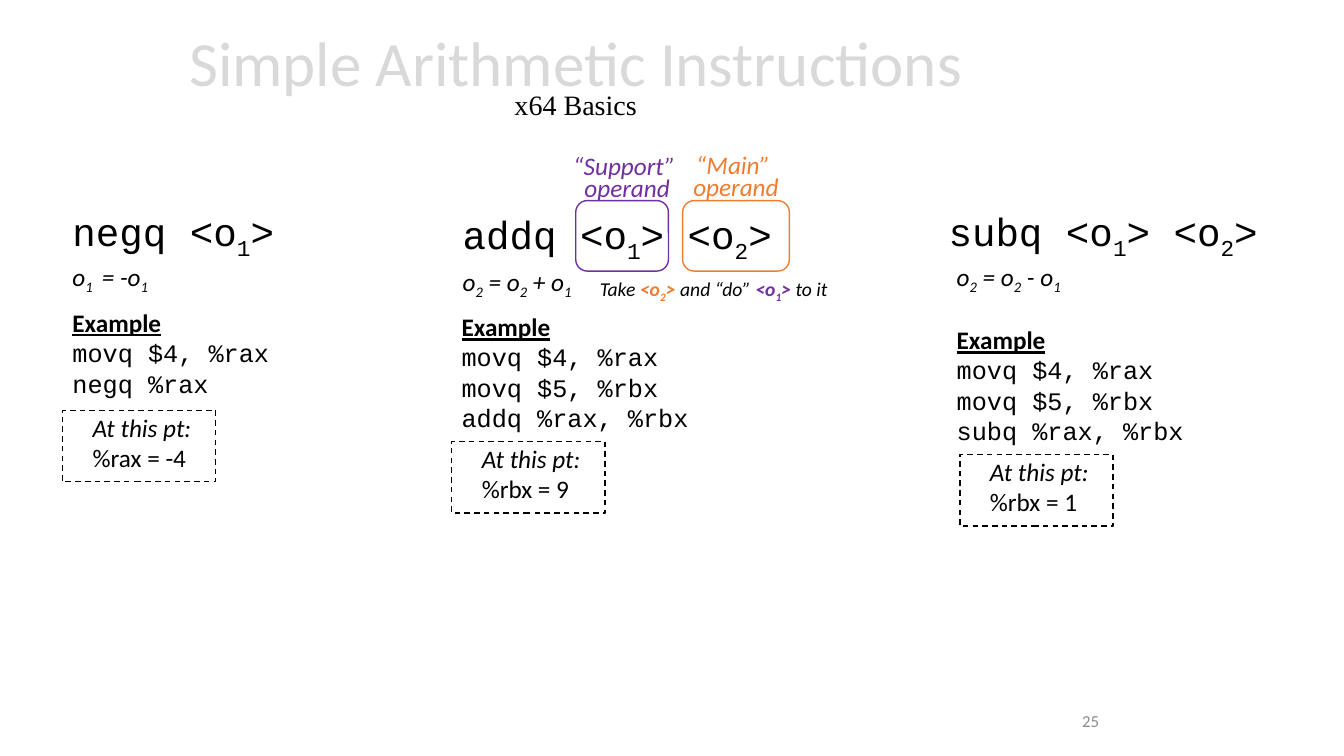
from pptx import Presentation
from pptx.dml.color import RGBColor
from pptx.enum.dml import MSO_LINE
from pptx.enum.shapes import MSO_SHAPE
from pptx.enum.text import MSO_ANCHOR, PP_ALIGN
from pptx.util import Inches, Pt

THEME = dict(
    sans="Calibri", mono="Courier New", serif="Times New Roman",
    black="000000", white="FFFFFF", title="D9D9D9", number="8C8C8C",
    main="ED7D31", support="7030A0",
    title_pt=45, subtitle_pt=20, syntax_pt=28, body_pt=18, note_pt=14, number_pt=12,
)

# Text in braces is subscript. Each part has its own (left, top, width, height).
TITLE, SUBTITLE = "Simple Arithmetic Instructions", "x64 Basics"
INSTRUCTIONS = [
    dict(syntax="negq <o{1}>", syntax_at=(0.62, 2.01, 2.32, 0.57),
         meaning="o{1 } = -o{1}", meaning_at=(0.62, 2.54, 0.99, 0.4),
         code=["movq $4, %rax", "negq %rax"], code_at=(0.62, 3, 2.16, 1.01),
         result="%rax = -4", result_at=(0.62, 4.07)),
    dict(syntax="addq <o{1}> <o{2}>", syntax_at=(4.49, 2.04, 3.41, 0.57),
         meaning="o{2} = o{2} + o{1}", meaning_at=(4.49, 2.59, 1.35, 0.4),
         code=["movq $4, %rax", "movq $5, %rbx", "addq %rax, %rbx"],
         code_at=(4.48, 3.04, 2.46, 1.31),
         result="%rbx = 9", result_at=(4.48, 4.38)),
    dict(syntax="subq <o{1}> <o{2}>", syntax_at=(9.31, 2.01, 3.34, 0.57),
         meaning="o{2} = o{2} - o{1}", meaning_at=(9.39, 2.54, 1.3, 0.4),
         code=["movq $4, %rax", "movq $5, %rbx", "subq %rax, %rbx"],
         code_at=(9.39, 3.17, 2.46, 1.31),
         result="%rbx = 1", result_at=(9.52, 4.51)),
]
OPERANDS = [  # label, colour, frame, label box
    ("“Main” ", "main", (6.77, 1.99, 1.06, 0.7), (6.77, 1.51, 1.06, 0.56)),
    ("“Support” ", "support", (5.71, 1.99, 0.92, 0.7), (5.58, 1.52, 1.28, 0.56)),
]
NOTE = [("Take ", "black"), ("<o{2}>", "main"), (" and “do” ", "black"),
        ("<o{1}>", "support"), (" to it", "black")]
RESULT_SIZE = (1.52, 0.71)


def rgb(color):
    return RGBColor.from_string(THEME[color])


def add_runs(p, text, size="body_pt", font="sans", color="black",
             bold=False, italic=False, underline=False):
    """Append text to a paragraph, lowering the parts in braces."""
    for i, piece in enumerate(text.replace("}", "{").split("{")):
        if not piece:
            continue
        r = p.add_run()
        r.text = piece
        f = r.font
        f.size, f.name = Pt(THEME[size]), THEME[font]
        f.bold, f.italic, f.underline = bold, italic, underline
        f.color.rgb = rgb(color)
        if i % 2:
            f._element.set("baseline", "-25000")


def add_text(s, at, lines=(), wrap=False, anchor=MSO_ANCHOR.TOP,
             align=PP_ALIGN.LEFT, spacing=None):
    """Add a text box of (text, style) lines and return its first paragraph."""
    tf = s.shapes.add_textbox(*map(Inches, at)).text_frame
    tf.word_wrap, tf.vertical_anchor = wrap, anchor
    for i in range(max(1, len(lines))):
        p = tf.add_paragraph() if i else tf.paragraphs[0]
        p.alignment, p.line_spacing = align, spacing
        if lines:
            text, style = lines[i]
            add_runs(p, text, **style)
    return tf.paragraphs[0]


def add_frame(s, shape, at, color, fill=None, dash=None):
    sp = s.shapes.add_shape(shape, *map(Inches, at))
    sp.shadow.inherit = False
    if fill:
        sp.fill.solid()
        sp.fill.fore_color.rgb = rgb(fill)
    else:
        sp.fill.background()
    sp.line.color.rgb, sp.line.width = rgb(color), Pt(1)
    if dash:
        sp.line.dash_style = dash


def add_instruction(s, item):
    add_text(s, item["syntax_at"], [(item["syntax"], dict(size="syntax_pt", font="mono"))])
    add_text(s, item["meaning_at"], [(item["meaning"], dict(italic=True))])
    add_text(s, item["code_at"], [("Example", dict(bold=True, underline=True))]
             + [(line, dict(font="mono")) for line in item["code"]])
    x, y = item["result_at"]
    add_frame(s, MSO_SHAPE.RECTANGLE, (x, y, *RESULT_SIZE), "black", "white", MSO_LINE.DASH)
    add_text(s, (x + 0.2, y - 0.03, 1.19, 0.71),
             [("At this pt:", dict(italic=True)), (item["result"], {})])


def main():
    prs = Presentation()
    prs.slide_width, prs.slide_height = Inches(13.33), Inches(7.5)
    s = prs.slides.add_slide(prs.slide_layouts[6])

    p = add_text(s, (0.71, 0.09, 10, 1.45), wrap=True, anchor=MSO_ANCHOR.MIDDLE,
                 align=PP_ALIGN.CENTER, spacing=0.7)
    add_runs(p, TITLE, size="title_pt", color="title")
    p.add_line_break()
    add_runs(p, SUBTITLE, size="subtitle_pt", font="serif")

    for item in INSTRUCTIONS:
        add_instruction(s, item)

    for label, color, frame, label_at in OPERANDS:
        add_frame(s, MSO_SHAPE.ROUNDED_RECTANGLE, frame, color)
        style = dict(color=color, italic=True)
        add_text(s, label_at, [(label, style), ("operand", style)],
                 align=PP_ALIGN.CENTER, spacing=Pt(16))

    p = add_text(s, (5.85, 2.7, 2.58, 0.34))
    for text, color in NOTE:
        add_runs(p, text, size="note_pt", color=color, bold=color != "black", italic=True)

    add_text(s, (8, 6.95, 3, 0.4), [("25", dict(size="number_pt", color="number"))],
             wrap=True, anchor=MSO_ANCHOR.MIDDLE, align=PP_ALIGN.RIGHT)
    prs.save("out.pptx")


if __name__ == "__main__":
    main()
